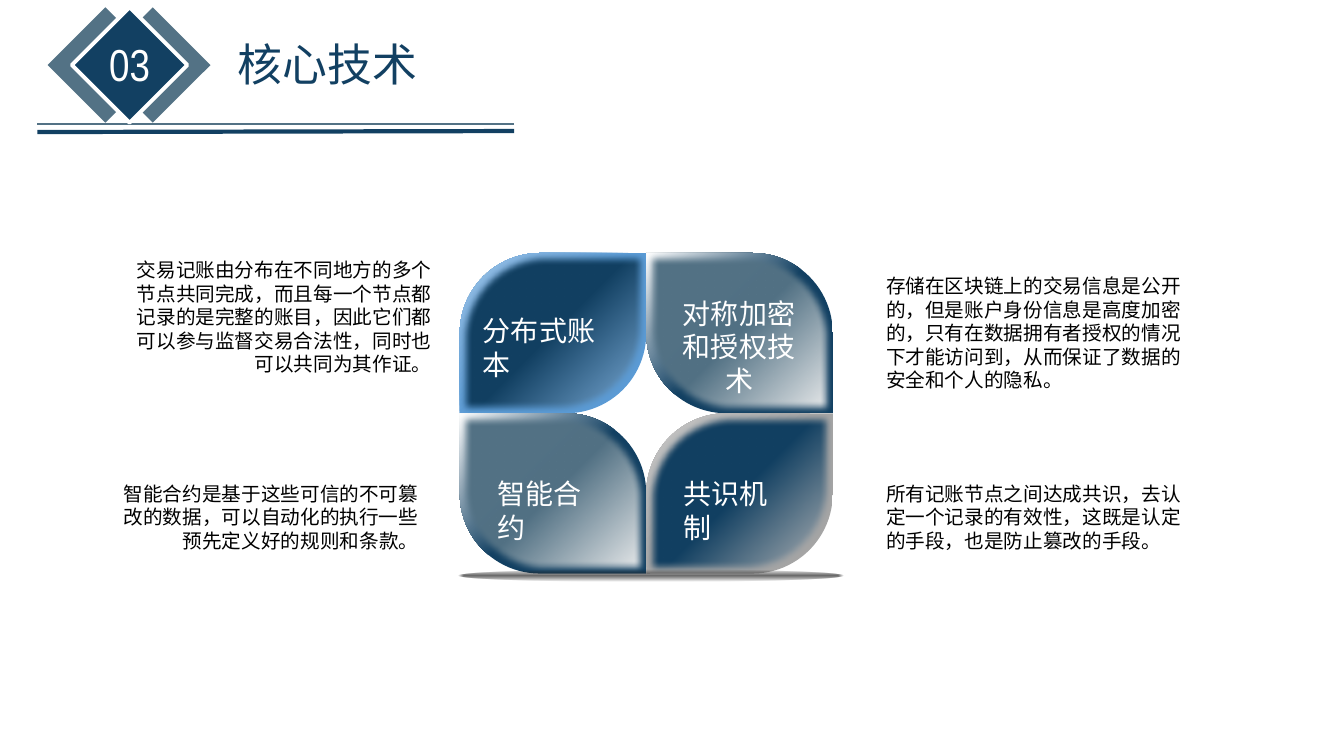
from lxml import etree
from pptx import Presentation
from pptx.dml.color import RGBColor
from pptx.enum.shapes import MSO_CONNECTOR, MSO_SHAPE
from pptx.enum.text import MSO_AUTO_SIZE, PP_ALIGN
from pptx.oxml.ns import qn
from pptx.util import Inches, Pt

LEFT, CENTER, RIGHT = PP_ALIGN.LEFT, PP_ALIGN.CENTER, PP_ALIGN.RIGHT
STRAIGHT = MSO_CONNECTOR.STRAIGHT
ROUND_RECT = MSO_SHAPE.ROUNDED_RECTANGLE
PETAL = MSO_SHAPE.ROUND_2_DIAG_RECTANGLE
OVAL = MSO_SHAPE.OVAL
FIT_SHAPE = MSO_AUTO_SIZE.SHAPE_TO_FIT_TEXT

COLORS = {
    "navy": "124062", "slate": "537285", "white": "FFFFFF", "black": "000000",
    "sky": "9DC3E6", "blue": "5B9BD5", "light blue": "84B4E0", "mist": "F2F2F2",
    "silver": "C9C9C9", "gray": "A5A5A5", "pale gray": "BCBCBC", "shade": "262626",
}
CHINESE_FONT = "Noto Sans CJK SC"
NUMBER_FONT = "Arial Narrow"


def color(name):
    return RGBColor.from_string(COLORS[name])


def write_text(frame, text, size=14, font=CHINESE_FONT, fill="black", align=LEFT):
    for index, line in enumerate(text.split("\n")):
        para = frame.paragraphs[0] if index == 0 else frame.add_paragraph()
        para.alignment = align
        span = para.add_run()
        span.text = line
        span.font.size = Pt(size)
        span.font.name = font
        span.font.color.rgb = color(fill)
        east_asian = etree.SubElement(span.font._element, qn("a:ea"))
        east_asian.set("typeface", font)


class SlideBuilder:
    def __init__(self, page):
        self.page = page

    def line(self, start, end, fill, width):
        rule = self.page.shapes.add_connector(
            STRAIGHT, *(Inches(value) for value in (*start, *end)))
        rule.line.color.rgb = color(fill)
        rule.line.width = Pt(width)
        etree.SubElement(rule._element.spPr, qn("a:effectLst"))

    def shape(self, kind, area, fill, adjust=(), rotation=0, outline=None):
        item = self.page.shapes.add_shape(kind, *(Inches(value) for value in area))
        item.shadow.inherit = False
        item.rotation = rotation
        for index, value in enumerate(adjust):
            item.adjustments[index] = value
        item.fill.solid()
        item.fill.fore_color.rgb = color(fill)
        if outline:
            item.line.color.rgb = color(outline)
            item.line.width = Pt(2.75)
        else:
            item.line.fill.background()
        return item

    def path_gradient(self, item, stops, path, focus):
        """Stops are (position, colour, opacity) in percent; focus is l, t, r, b."""
        gradient = etree.Element(qn("a:gradFill"), rotWithShape="1")
        stop_list = etree.SubElement(gradient, qn("a:gsLst"))
        for position, name, opacity in stops:
            stop = etree.SubElement(stop_list, qn("a:gs"), pos=str(position * 1000))
            tone = etree.SubElement(stop, qn("a:srgbClr"), val=COLORS[name])
            if opacity < 100:
                etree.SubElement(tone, qn("a:alpha"), val=str(opacity * 1000))
        route = etree.SubElement(gradient, qn("a:path"), path=path)
        sides = {side: str(value * 1000) for side, value in zip("ltrb", focus)}
        etree.SubElement(route, qn("a:fillToRect"), **sides)
        properties = item._element.spPr
        properties.replace(properties.find(qn("a:solidFill")), gradient)

    def petal(self, area, adjust, rim, face):
        for stops, soft in ((rim, False), (face, True)):
            item = self.shape(PETAL, area, "navy", adjust)
            self.path_gradient(item, [(*stop, 100) for stop in stops],
                               "circle", (0, 0, 100, 100))
            if soft:
                effects = item._element.spPr.find(qn("a:effectLst"))
                etree.SubElement(effects, qn("a:softEdge"), rad=str(Pt(5)))

    def text(self, area, text, inset=True, **style):
        box = self.page.shapes.add_textbox(*(Inches(value) for value in area))
        frame = box.text_frame
        frame.word_wrap = True
        frame.auto_size = FIT_SHAPE
        if not inset:
            frame.margin_left = frame.margin_right = 0
            frame.margin_top = frame.margin_bottom = 0
        write_text(frame, text, **style)


def main():
    deck = Presentation()
    deck.slide_width, deck.slide_height = Inches(13.33), Inches(7.5)
    builder = SlideBuilder(deck.slides.add_slide(deck.slide_layouts[6]))

    # Header: section number and title
    builder.line((5.1, 1.23), (0.37, 1.23), "slate", 1)
    for left, fill, outline in ((1.11, "slate", None), (0.64, "slate", None),
                                (0.88, "navy", "white")):
        builder.shape(ROUND_RECT, (left, 0.24, 0.81, 0.81), fill, (0,), 45, outline)
    builder.text((0.95, 0.32, 0.67, 0.64), "03", size=32, font=NUMBER_FONT,
                 fill="white", align=CENTER)
    builder.line((5.1, 1.3), (0.37, 1.31), "navy", 3)
    builder.text((2.26, 0.32, 2.66, 0.64), "核心技术", size=32, fill="navy")

    # Four petals: a two-by-two grid, each with a rim and a soft-edged face
    width, height = 1.85, 1.59
    slate_rim = ((0, "white"), (50, "navy"))
    slate_face = ((50, "slate"), (100, "mist"))
    petals = (
        (0, 0, ((0, "sky"), (50, "blue")), ((50, "navy"), (100, "light blue"))),
        (0, 1, slate_rim, slate_face),
        (1, 0, slate_rim, slate_face),
        (1, 1, ((0, "silver"), (50, "gray")), ((50, "navy"), (100, "pale gray"))),
    )
    for column, row, rim, face in petals:
        area = (4.56 + column * width, 2.51 + row * height, width, height)
        adjust = (0.5, 0) if column == row else (0, 0.5)
        builder.petal(area, adjust, rim, face)

    # Petal labels
    labels = (
        (4.79, 3.11, 1.38, 0.67, "分布式账本", LEFT),
        (4.93, 4.73, 1.1, 0.67, "智能合约", LEFT),
        (6.64, 2.94, 1.38, 1.01, "对称加密\n和授权技术", CENTER),
        (6.78, 4.73, 1.1, 0.67, "共识机制", LEFT),
    )
    for *area, label, align in labels:
        builder.text(area, label, inset=False, size=20, fill="white", align=align)

    # Ground shadow
    ground = builder.shape(OVAL, (4.55, 5.65, 3.82, 0.12), "shade")
    builder.path_gradient(ground, ((0, "shade", 70), (100, "shade", 0)),
                          "shape", (50, 50, 50, 50))

    # Explanations on both sides
    notes = (
        (1.08, 2.51, 1.28, RIGHT, "交易记账由分布在不同地方的多个节点共同完成，而且每一个节点都记录的是完整的账目，因此它们都可以参与监督交易合法性，同时也可以共同为其作证。"),
        (8.69, 2.67, 1.28, LEFT, "存储在区块链上的交易信息是公开的，但是账户身份信息是高度加密的，只有在数据拥有者授权的情况下才能访问到，从而保证了数据的安全和个人的隐私。"),
        (8.69, 4.73, 0.81, LEFT, "所有记账节点之间达成共识，去认定一个记录的有效性，这既是认定的手段，也是防止篡改的手段。"),
        (0.95, 4.73, 0.81, RIGHT, "智能合约是基于这些可信的不可篡改的数据，可以自动化的执行一些预先定义好的规则和条款。"),
    )
    for left, top, note_height, align, note in notes:
        builder.text((left, top, 3.3, note_height), note, align=align)

    deck.save("out.pptx")


if __name__ == "__main__":
    main()
